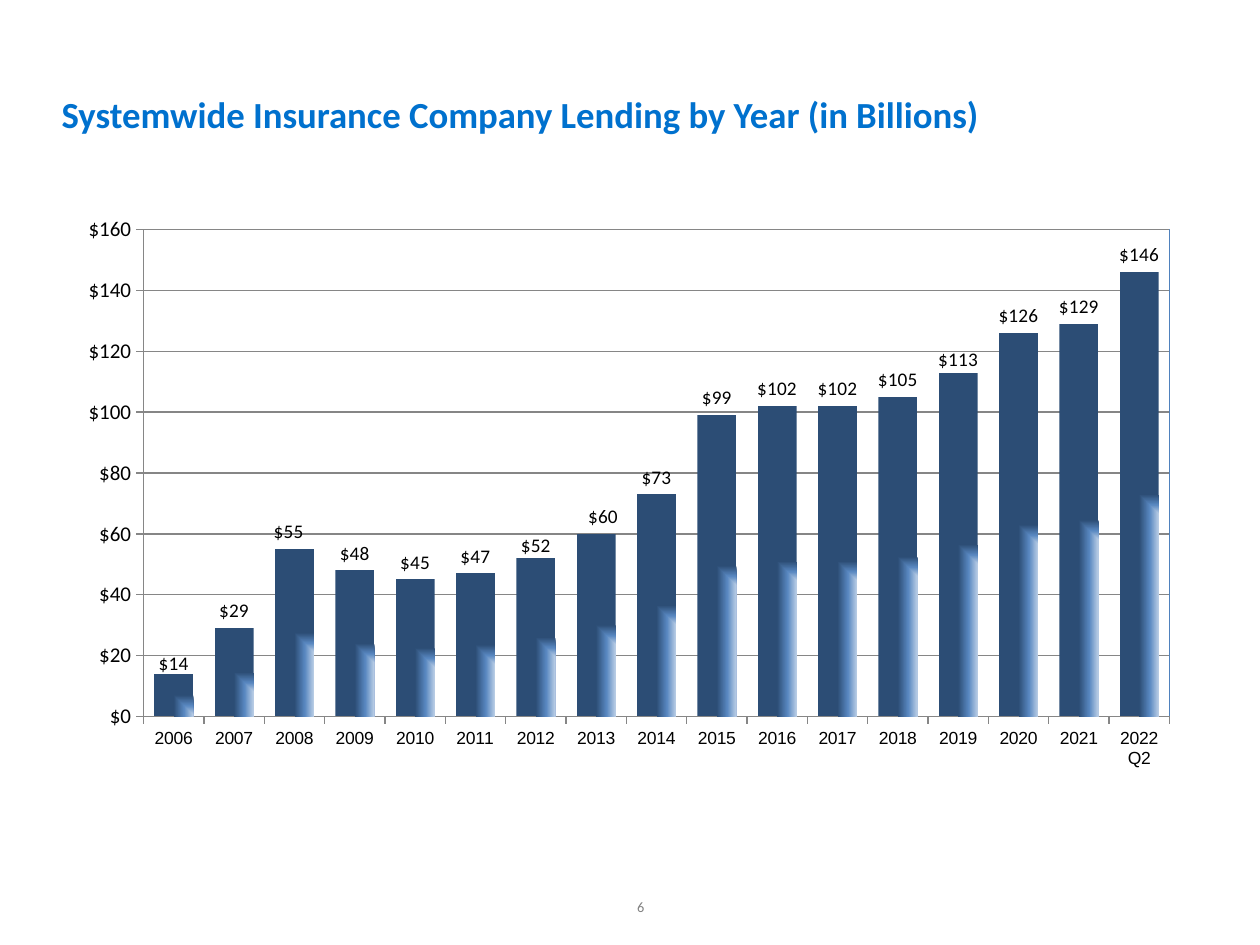
"""Build a slide with a column chart of insurance company lending by year."""
from dataclasses import dataclass

from lxml import etree
from pptx import Presentation
from pptx import util as u
from pptx.chart import data as chart_data
from pptx.dml import color
from pptx.enum import chart as chart_enum
from pptx.enum import text
from pptx.oxml import parse_xml

COLORS = {
    "title": "0071CE", "number": "808080", "text": "000000", "grid": "868686",
    "frame": "4F81BD", "light": "B9CDE5", "middle": "5887C0", "dark": "2C4D75",
}
NAMESPACES = (
    'xmlns:c="http://schemas.openxmlformats.org/drawingml/2006/chart" '
    'xmlns:a="http://schemas.openxmlformats.org/drawingml/2006/main"'
)
DOLLARS = '"$"#,##0'
LENDING = {
    "2006": 14, "2007": 29, "2008": 55, "2009": 48, "2010": 45, "2011": 47,
    "2012": 52, "2013": 60, "2014": 73, "2015": 99, "2016": 102, "2017": 102,
    "2018": 105, "2019": 113, "2020": 126, "2021": 129, "2022 Q2": 146,
}


@dataclass(frozen=True)
class Frame:
    """Place and size in inches."""
    left: float
    top: float
    width: float
    height: float

    def lengths(self) -> tuple:
        """Return the four measures as lengths."""
        return tuple(u.Inches(n) for n in (self.left, self.top, self.width, self.height))


@dataclass(frozen=True)
class LabelShift:
    """Move of one value label, as a share of the chart size."""
    year: str
    x: float
    y: float


LABEL_SHIFTS = (
    LabelShift("2006", 0, 0.01),
    LabelShift("2008", -0.005, 0),
    LabelShift("2012", 0, 0.006),
    LabelShift("2013", 0.006, 0),
    LabelShift("2019", 0, 0.006),
)


def rgb(name: str) -> color.RGBColor:
    """Return a named colour."""
    return color.RGBColor.from_string(COLORS[name])


def style_font(font, *, size: float, name: str = "Calibri", ink: str = "text",
               bold: bool = False) -> None:
    """Set the face, size and colour of a font."""
    font.name, font.size, font.bold = name, u.Pt(size), bold
    font.color.rgb = rgb(ink)


def add_text(page, words: str, frame: Frame, *, size: float, ink: str,
             bold: bool = False, align=text.PP_ALIGN.LEFT) -> None:
    """Add one line of text centred vertically in its box."""
    box = page.shapes.add_textbox(*frame.lengths())
    box.text_frame.word_wrap = True
    box.text_frame.vertical_anchor = text.MSO_ANCHOR.MIDDLE
    para = box.text_frame.paragraphs[0]
    para.alignment = align
    span = para.add_run()
    span.text = words
    style_font(span.font, size=size, ink=ink, bold=bold)


def element(markup: str) -> etree.ElementBase:
    """Parse chart markup, adding its namespaces to the first tag."""
    tag, rest = markup.split(">", 1)
    return parse_xml(f"{tag} {NAMESPACES}>{rest}")


def manual_layout(head: str, **places: float) -> etree.ElementBase:
    """Return a manual chart layout."""
    marks = "".join(f'<c:{key} val="{place}"/>' for key, place in places.items())
    return element(f"<c:layout><c:manualLayout>{head}{marks}</c:manualLayout></c:layout>")


def style_axis(axis, *, size: float, font: str) -> None:
    """Set the ticks, line and font of an axis."""
    axis.major_tick_mark = chart_enum.XL_TICK_MARK.OUTSIDE
    axis.minor_tick_mark = chart_enum.XL_TICK_MARK.NONE
    axis.format.line.color.rgb = rgb("grid")
    axis.format.line.width = u.Pt(0.75)
    style_font(axis.tick_labels.font, size=size, name=font)


def style_plot_area(chart) -> None:
    """Place the plot area and give it a thin frame."""
    area = chart.element.xpath(".//c:plotArea")[0]
    for old in area.xpath("c:layout"):
        area.remove(old)
    head = '<c:layoutTarget val="inner"/><c:xMode val="edge"/><c:yMode val="edge"/>'
    area.insert(0, manual_layout(head, x=0.088, y=0.051, w=0.885, h=0.699))
    area.append(element(
        f'<c:spPr><a:noFill/><a:ln w="9525"><a:solidFill><a:srgbClr val="{COLORS["frame"]}"/>'
        "</a:solidFill></a:ln></c:spPr>"))


def fill_columns(series) -> None:
    """Fill the columns with a gradient from the lower right corner."""
    series.format.fill.solid()
    stops = "".join(
        f'<a:gs pos="{share * 1000}"><a:srgbClr val="{COLORS[name]}"/></a:gs>'
        for share, name in ((0, "light"), (46, "middle"), (100, "dark")))
    solid = series.format.fill and series._element.xpath("c:spPr/a:solidFill")[0]
    solid.getparent().replace(solid, element(
        f'<a:gradFill><a:gsLst>{stops}</a:gsLst><a:path path="rect">'
        '<a:fillToRect l="100000" t="100000"/></a:path></a:gradFill>'))


def label_columns(series) -> None:
    """Show dollar values above the columns and shift some of them."""
    labels = series.data_labels
    labels.show_value = True
    labels.number_format, labels.number_format_is_linked = DOLLARS, False
    labels.position = chart_enum.XL_LABEL_POSITION.OUTSIDE_END
    style_font(labels.font, size=11)
    years = list(LENDING)
    for shift in LABEL_SHIFTS:
        index = years.index(shift.year)
        label = series.points[index].data_label
        label.position = chart_enum.XL_LABEL_POSITION.OUTSIDE_END
        style_font(label.font, size=11)
        node = series._element.xpath(f"c:dLbls/c:dLbl[c:idx/@val='{index}']")[0]
        node.insert(1, manual_layout("", x=shift.x, y=shift.y))
        number = element("<c:numFmt></c:numFmt>")
        number.set("formatCode", DOLLARS)
        number.set("sourceLinked", "0")
        node.insert(2, number)


def add_lending_chart(page, frame: Frame) -> None:
    """Add the column chart of lending by year."""
    figures = chart_data.CategoryChartData(number_format=DOLLARS)
    figures.categories = list(LENDING)
    figures.add_series("Series 1", list(LENDING.values()))
    chart = page.shapes.add_chart(
        chart_enum.XL_CHART_TYPE.COLUMN_CLUSTERED, *frame.lengths(), figures).chart
    chart.has_legend = chart.has_title = False
    style_font(chart.font, size=18)
    style_axis(chart.category_axis, size=10, font="Arial")
    values = chart.value_axis
    style_axis(values, size=12, font="Calibri")
    values.minimum_scale, values.maximum_scale, values.major_unit = 0, 160, 20
    values.tick_labels.number_format = DOLLARS
    values.tick_labels.number_format_is_linked = False
    values.has_major_gridlines = True
    values.major_gridlines.format.line.color.rgb = rgb("grid")
    values.major_gridlines.format.line.width = u.Pt(0.75)
    plot = chart.plots[0]
    plot.gap_width, plot.overlap, plot.vary_by_categories = 55, 100, False
    fill_columns(plot.series[0])
    label_columns(plot.series[0])
    style_plot_area(chart)


def main() -> None:
    """Build and save the deck."""
    deck = Presentation()
    deck.slide_width, deck.slide_height = u.Inches(10), u.Inches(7.5)
    page = deck.slides.add_slide(deck.slide_layouts[6])
    add_text(page, "Systemwide Insurance Company Lending by Year (in Billions)",
             Frame(0.39, 0.65, 8.17, 0.5), size=21, ink="title", bold=True)
    add_text(page, "6", Frame(3.92, 7, 2.33, 0.4), size=8.2, ink="number",
             align=text.PP_ALIGN.CENTER)
    add_lending_chart(page, Frame(0.33, 1.54, 9.2, 5.53))
    deck.save("out.pptx")


if __name__ == "__main__":
    main()
